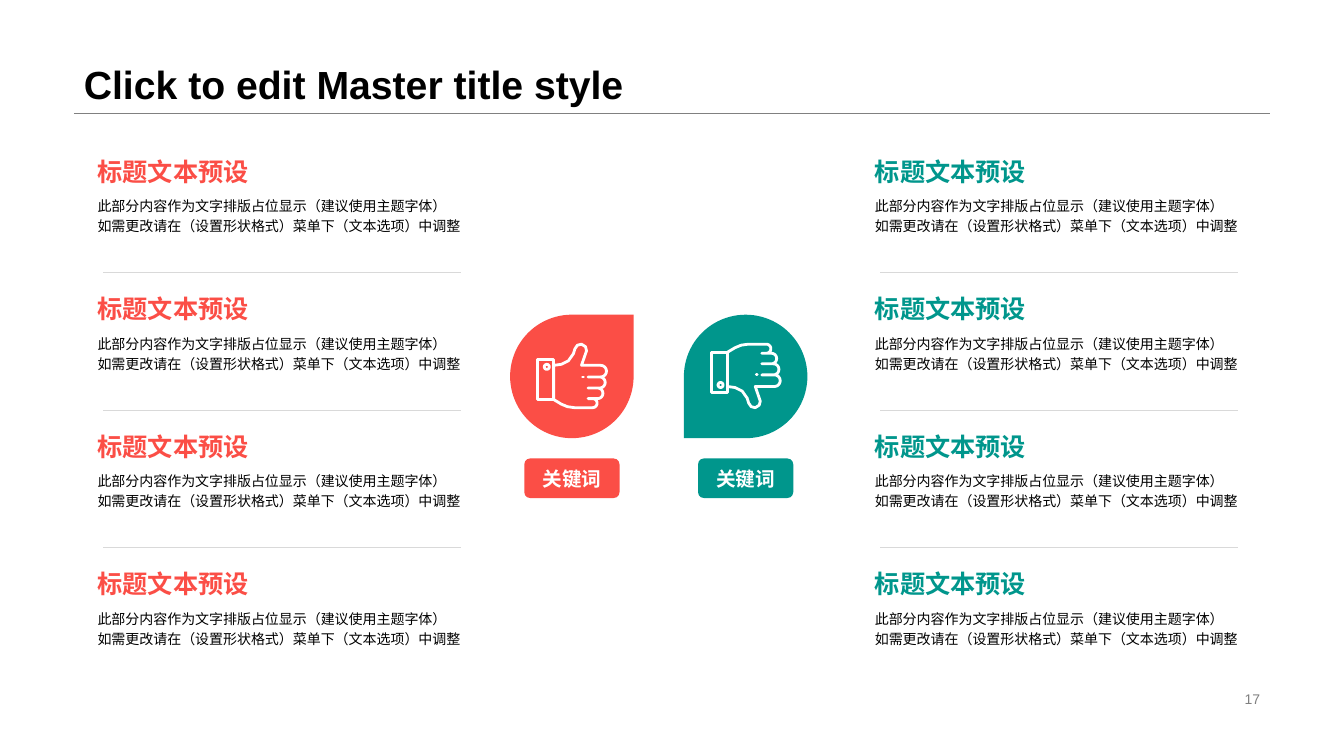
"""Builds the slide that sets thumbs up against thumbs down."""
from math import cos, pi, sin

from lxml.etree import SubElement
from pptx import Presentation
from pptx.dml.color import RGBColor
from pptx.enum.shapes import MSO_CONNECTOR, MSO_SHAPE
from pptx.enum.text import MSO_ANCHOR, PP_ALIGN
from pptx.oxml.ns import qn
from pptx.util import Pt

INK = {"red": "FB4E46", "teal": "00968C", "black": "000000",
       "white": "FFFFFF", "gray": "808080", "pale": "D9D9D9"}
BODY = ["此部分内容作为文字排版占位显示（建议使用主题字体）",
        "如需更改请在（设置形状格式）菜单下（文本选项）中调整"]
STEP = 98.2
UNIT = 0.72


def write(shape, rows, size, ink, bold=False, wrap=True, lead=None,
          anchor=MSO_ANCHOR.TOP, align=PP_ALIGN.LEFT):
    frame = shape.text_frame
    frame.word_wrap = wrap
    frame.vertical_anchor = anchor
    para = frame.paragraphs[0]
    para.alignment = align
    para.line_spacing = lead
    for i, row in enumerate(rows):
        if i:
            para.add_line_break()
        run = para.add_run()
        run.text = row
        run.font.name = "Arial"
        run.font.size = Pt(size)
        run.font.bold = bold
        run.font.color.rgb = RGBColor.from_string(INK[ink])


def rule(left, right, y, ink):
    line = shapes.add_connector(MSO_CONNECTOR.STRAIGHT,
                                Pt(left), Pt(y), Pt(right), Pt(y))
    line.line.color.rgb = RGBColor.from_string(INK[ink])
    line.line.width = Pt(0.25)
    SubElement(line._element.spPr, qn("a:effectLst"))


deck = Presentation()
deck.slide_width, deck.slide_height = Pt(960), Pt(540)
slide = deck.slides.add_slide(deck.slide_layouts[6])
shapes = slide.shapes

rule(52.8, 907.2, 81, "gray")
title = shapes.add_textbox(Pt(52.8), Pt(0), Pt(854.4), Pt(81))
write(title, ["Click to edit Master title style"], 28, "black", bold=True,
      lead=0.9, anchor=MSO_ANCHOR.BOTTOM)
page = shapes.add_textbox(Pt(678), Pt(491), Pt(229.2), Pt(16.3))
write(page, ["17"], 10, "gray", anchor=MSO_ANCHOR.MIDDLE,
      align=PP_ALIGN.RIGHT)

palm = [(17.5, 22.5), (25, 21.5), (32, 18), (37, 11), (38.5, 6), (41, 2.5),
        (45, 1.5), (49, 4), (50, 8), (45, 22.5)]
edges = [22.5, 34, 45, 55.5, 64.5]
for top, low, tip in zip(edges, edges[1:], [64, 63, 61, 56]):
    r = (low - top) / 2
    for k in range(13):
        turn = pi * k / 12
        palm.append((tip + r * sin(turn), top + r - r * cos(turn)))
    if low < edges[-1]:
        palm.append((51.5, low))
palm += [(38, 64.5), (31, 63.5), (25, 61), (17.5, 56.5)]
cuff = [(1.5, 16.5), (17.5, 16.5), (17.5, 56.5), (1.5, 56.5)]
stud = [(10.6 + 2.5 * cos(pi * k / 8), 24 + 2.5 * sin(pi * k / 8))
        for k in range(16)]
dot = [(46, 34), (47, 34)]

for ink, col, mid, down in [("red", 62.6, 408.5, False),
                            ("teal", 617.8, 532.6, True)]:
    drop = shapes.add_shape(MSO_SHAPE.TEAR, Pt(mid - 44.1), Pt(224.8),
                            Pt(88.2), Pt(88.2))
    drop.rotation = 180 if down else 0
    tag = shapes.add_shape(MSO_SHAPE.ROUNDED_RECTANGLE, Pt(mid - 34), Pt(327.5),
                           Pt(68), Pt(28.3))
    tag.adjustments[0] = 0.15
    write(tag, ["关键词"], 14, "white", bold=True, wrap=False,
          anchor=MSO_ANCHOR.MIDDLE, align=PP_ALIGN.CENTER)
    for shape in (drop, tag):
        shape.shadow.inherit = False
        shape.fill.solid()
        shape.fill.fore_color.rgb = RGBColor.from_string(INK[ink])
        shape.line.fill.background()

    pen = None
    for part in (palm, cuff, stud, dot):
        dots = [(Pt(mid - 25.5 + x * UNIT),
                 Pt(244.8 + (66 - y if down else y) * UNIT)) for x, y in part]
        if pen:
            pen.move_to(*dots[0])
        else:
            pen = shapes.build_freeform(*dots[0])
        pen.add_line_segments(dots[1:], close=part is not dot)
    hand = pen.convert_to_shape()
    hand.shadow.inherit = False
    hand.fill.background()
    hand.line.color.rgb = RGBColor.from_string(INK["white"])
    hand.line.width = Pt(2)
    edge = hand.line._get_or_add_ln()
    edge.set("cap", "rnd")
    SubElement(edge, qn("a:round"))

    for i in range(4):
        top = 108 + i * STEP
        body = shapes.add_textbox(Pt(col), Pt(top + 27.4), Pt(279.4), Pt(47.5))
        write(body, BODY, 10, "black", lead=1.2)
        head = shapes.add_textbox(Pt(col), Pt(top), Pt(279.4), Pt(27.4))
        write(head, ["标题文本预设"], 18, ink, bold=True, wrap=False)
        if i < 3:
            rule(col + 11, col + 266.4, top + 86.6, "pale")

deck.save("out.pptx")
